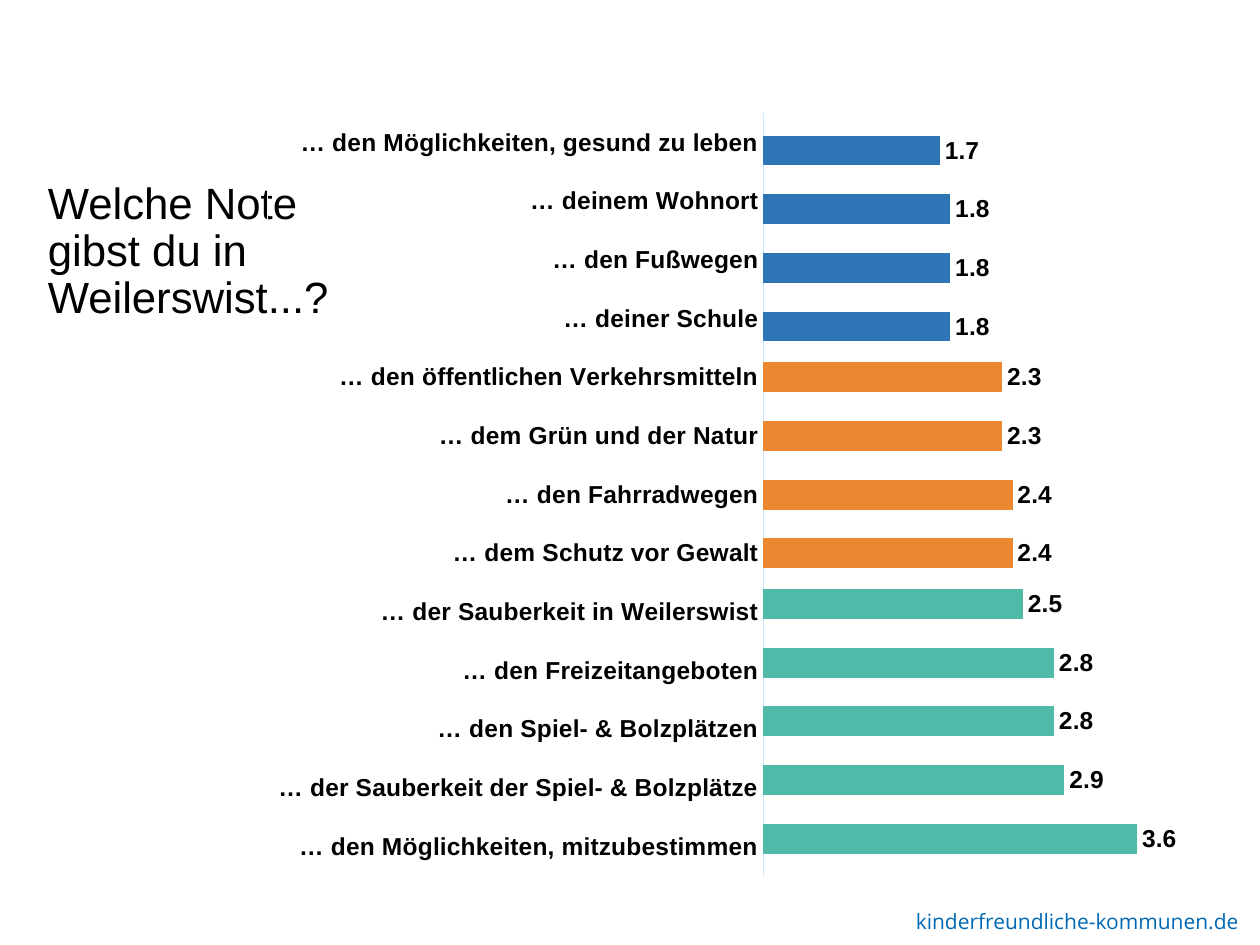
from dataclasses import dataclass

from lxml.etree import SubElement
from pptx import Presentation
from pptx.chart.data import CategoryChartData
from pptx.dml.color import RGBColor
from pptx.enum.chart import XL_CHART_TYPE, XL_LABEL_POSITION, XL_TICK_MARK
from pptx.enum.text import MSO_ANCHOR, MSO_AUTO_SIZE, PP_ALIGN
from pptx.oxml import parse_xml
from pptx.oxml.ns import nsdecls, qn
from pptx.util import Pt


@dataclass(frozen=True)
class Theme:
    """Colours, fonts and type sizes of the slide."""

    text: str = "000000"
    link: str = "0069B5"
    axis: str = "CEEAFF"
    border: str = "FFFFFF"
    grades: tuple = ("2E75B6", "ED8731", "50BAA8")
    font: str = "Arial"
    footer_font: str = "Open Sans"
    title_size: int = 25
    chart_size: int = 14
    footer_size: int = 12


THEME = Theme()

RATINGS = [
    ("… den Möglichkeiten, mitzubestimmen", 3.6),
    ("… der Sauberkeit der Spiel- & Bolzplätze", 2.9),
    ("… den Spiel- & Bolzplätzen", 2.8),
    ("… den Freizeitangeboten", 2.8),
    ("… der Sauberkeit in Weilerswist", 2.5),
    ("… dem Schutz vor Gewalt", 2.4),
    ("… den Fahrradwegen", 2.4),
    ("… dem Grün und der Natur", 2.3),
    ("… den öffentlichen Verkehrsmitteln", 2.3),
    ("… deiner Schule", 1.8),
    ("… den Fußwegen", 1.8),
    ("… deinem Wohnort", 1.8),
    ("… den Möglichkeiten, gesund zu leben", 1.7),
]
GRADE_RANGES = [(0, 2), (2, 2.5), (2.5, 6)]
PLOT_AREA = {"x": 0.511, "y": 0.104, "w": 0.428, "h": 0.87}


def style_font(font, name, size, color, bold=False):
    """Apply a typeface, size, colour and weight to a font."""
    font.name = name
    font.size = Pt(size)
    font.bold = bold
    font.color.rgb = RGBColor.from_string(color)


def add_title(slide, text):
    """Place the question in the title placeholder."""
    title = slide.shapes.title
    title.left, title.top = Pt(20.16), Pt(100.08)
    title.width, title.height = Pt(184.32), Pt(139.68)
    frame = title.text_frame
    frame.text = text
    frame.word_wrap = True
    frame.auto_size = MSO_AUTO_SIZE.NONE
    frame.vertical_anchor = MSO_ANCHOR.TOP
    paragraph = frame.paragraphs[0]
    paragraph.alignment = PP_ALIGN.LEFT
    paragraph.line_spacing = 0.9
    style_font(paragraph.font, THEME.font, THEME.title_size, THEME.text)


def add_footer(slide, text):
    """Add the web address at the lower right."""
    footer = slide.shapes.add_textbox(Pt(516.24), Pt(515.52), Pt(210.96), Pt(21.6))
    frame = footer.text_frame
    frame.text = text
    frame.word_wrap = True
    frame.auto_size = MSO_AUTO_SIZE.SHAPE_TO_FIT_TEXT
    style_font(frame.paragraphs[0].font, THEME.footer_font, THEME.footer_size, THEME.link)


def build_chart_data():
    """Sort the ratings into one series for each range of grades."""
    data = CategoryChartData(number_format="0.0")
    data.categories = [label for label, _ in RATINGS]
    for number, (low, high) in enumerate(GRADE_RANGES, start=1):
        values = [value if low <= value < high else None for _, value in RATINGS]
        data.add_series(f"Series {number}", values)
    return data


def style_axes(chart):
    """Hide the value axis and show plain category labels."""
    value_axis = chart.value_axis
    value_axis.minimum_scale = 0
    value_axis.maximum_scale = 4
    value_axis.has_major_gridlines = False
    value_axis.visible = False
    category_axis = chart.category_axis
    category_axis.major_tick_mark = XL_TICK_MARK.NONE
    category_axis.minor_tick_mark = XL_TICK_MARK.NONE
    category_axis.format.line.color.rgb = RGBColor.from_string(THEME.axis)
    category_axis.format.line.width = Pt(0.75)
    style_font(category_axis.tick_labels.font, THEME.font, THEME.chart_size, THEME.text, True)


def style_series(series, color):
    """Colour the bars of a series and label their ends."""
    series.format.fill.solid()
    series.format.fill.fore_color.rgb = RGBColor.from_string(color)
    labels = series.data_labels
    labels.show_value = True
    labels.position = XL_LABEL_POSITION.OUTSIDE_END
    style_font(labels.font, THEME.font, THEME.chart_size, THEME.text, True)


def set_plot_layout(chart):
    """Fix the inner plot area as fractions of the chart."""
    plot_area = chart.element.find(".//" + qn("c:plotArea"))
    layout = plot_area.find(qn("c:layout"))
    if layout is None:
        layout = parse_xml(f"<c:layout {nsdecls('c')}/>")
        plot_area.insert(0, layout)
    manual = SubElement(layout, qn("c:manualLayout"))
    settings = {"layoutTarget": "inner", "xMode": "edge", "yMode": "edge", **PLOT_AREA}
    for tag, value in settings.items():
        SubElement(manual, qn(f"c:{tag}")).set("val", str(value))


def set_chart_border(chart):
    """Give the chart a thin border and no fill."""
    properties = parse_xml(
        f"<c:spPr {nsdecls('c', 'a')}><a:noFill/><a:ln w=\"{Pt(0.75)}\"><a:solidFill>"
        f'<a:srgbClr val="{THEME.border}"/></a:solidFill></a:ln></c:spPr>'
    )
    chart.element.find(qn("c:txPr")).addprevious(properties)


def add_rating_chart(slide):
    """Add the bar chart of average grades."""
    chart = slide.shapes.add_chart(
        XL_CHART_TYPE.BAR_CLUSTERED,
        Pt(152.64), Pt(12.24), Pt(555.12), Pt(501.84),
        build_chart_data(),
    ).chart
    chart.has_title = False
    chart.has_legend = False
    style_font(chart.font, THEME.font, THEME.chart_size, THEME.text, True)
    plot = chart.plots[0]
    plot.vary_by_categories = False
    plot.gap_width = 43
    plot.overlap = 73
    style_axes(chart)
    for series, color in zip(plot.series, THEME.grades):
        style_series(series, color)
    set_plot_layout(chart)
    set_chart_border(chart)


def main():
    """Build and save the presentation."""
    presentation = Presentation()
    presentation.slide_width, presentation.slide_height = Pt(720), Pt(540)
    slide = presentation.slides.add_slide(presentation.slide_layouts[5])
    add_footer(slide, "kinderfreundliche-kommunen.de")
    add_title(slide, "Welche Note gibst du in Weilerswist...?")
    add_rating_chart(slide)
    presentation.save("out.pptx")


if __name__ == "__main__":
    main()
